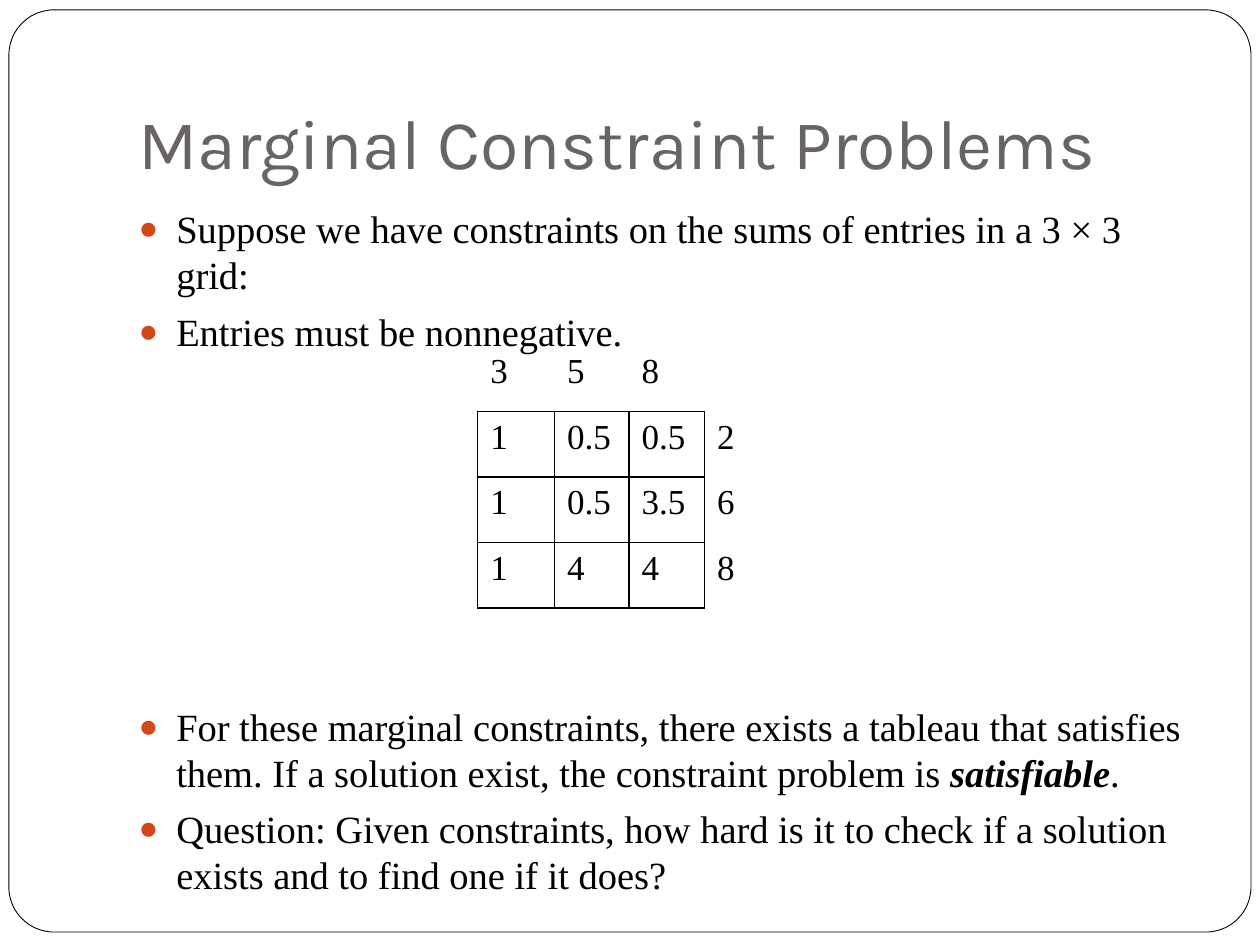
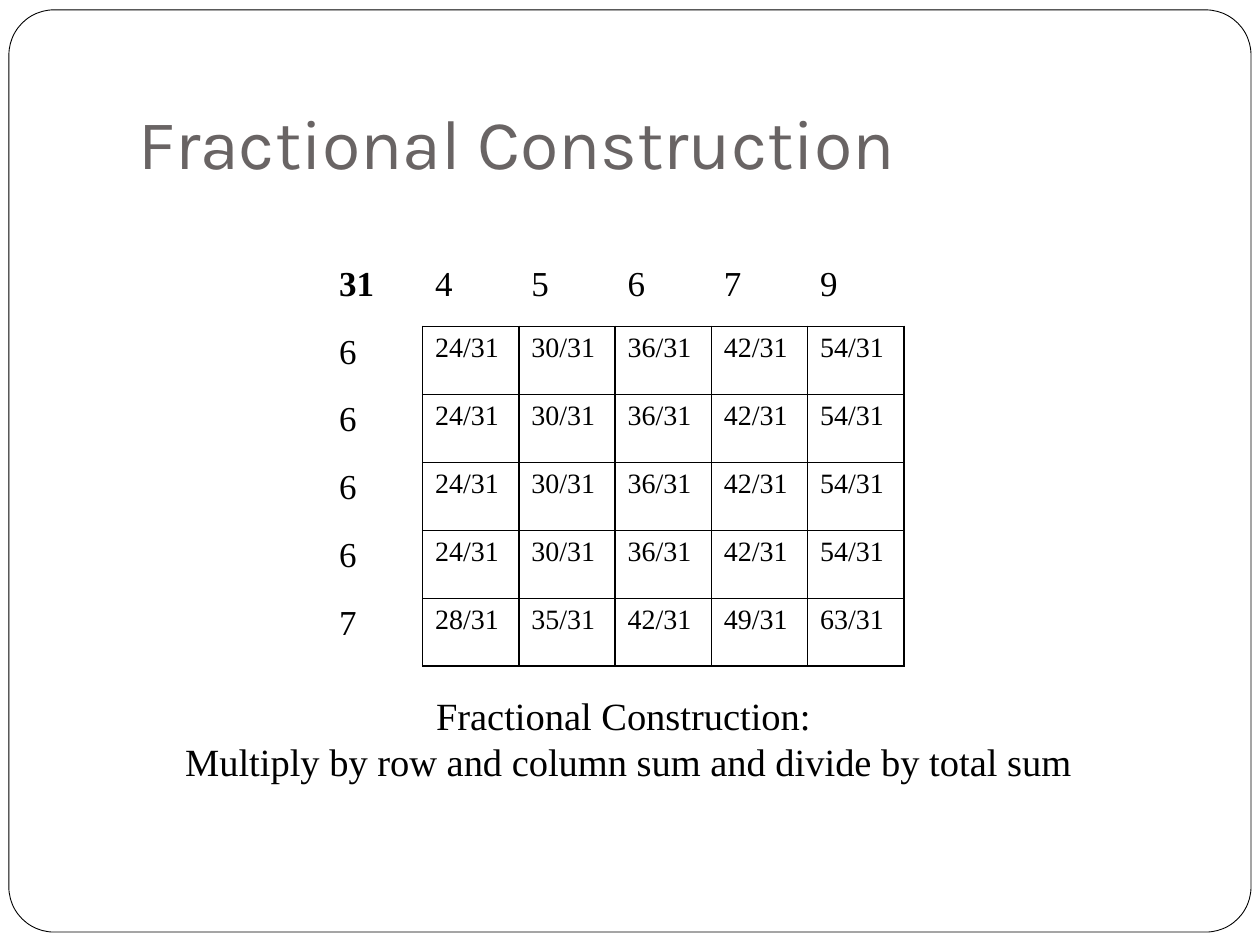
"""Build two slides on marginal constraint problems."""
from dataclasses import dataclass
from typing import NamedTuple

from lxml import etree
from pptx import Presentation
from pptx.dml.color import RGBColor
from pptx.enum import shapes, text
from pptx.oxml import ns
from pptx.util import Cm, Pt


@dataclass(frozen=True)
class Theme:
    """Colours, fonts and type sizes shared by the slides."""
    paper: RGBColor = RGBColor(0xFF, 0xFF, 0xFF)
    ink: RGBColor = RGBColor(0, 0, 0)
    heading: RGBColor = RGBColor(0x69, 0x64, 0x64)
    accent: RGBColor = RGBColor(0xD3, 0x48, 0x17)
    heading_font: str = "Karla"
    body_font: str = "Times New Roman"
    heading_size: Pt = Pt(40)
    body_size: Pt = Pt(22)
    table_size: Pt = Pt(20)
    fraction_size: Pt = Pt(16)
    body_leading: Pt = Pt(26.4)
    rule: Pt = Pt(1)


class Area(NamedTuple):
    """Left, top, width and height of an object."""
    left: Cm
    top: Cm
    width: Cm
    height: Cm


class Bullet(NamedTuple):
    """A list item with an optional emphasised ending."""
    words: str
    emphasis: str = ""
    ending: str = ""
    gap: Pt = Pt(5.8)


@dataclass(frozen=True)
class Tableau:
    """A ruled grid of entries with unruled margins for its sums."""
    left: Cm
    top: Cm
    columns: list[Cm]
    row_height: Cm
    rows: list[list[str]]
    entry_columns: range
    entry_size: Pt

    def is_entry(self, row: int, column: int) -> bool:
        """Tell whether a position lies inside the ruled grid."""
        return 1 <= row < len(self.rows) and column in self.entry_columns


THEME = Theme()
FRAME = Area(Cm(0.18), Cm(0.2), Cm(25.04), Cm(18.59))
TITLE = Area(Cm(2.54), Cm(0.76), Cm(21.59), Cm(3.18))
BODY = Area(Cm(2.54), Cm(4.01), Cm(21.59), Cm(12.7))
CAPTION = Area(Cm(0.89), Cm(13.82), Cm(23.55), Cm(2.13))
SIDES = {"lnL": (0, -1), "lnR": (0, 1), "lnT": (-1, 0), "lnB": (1, 0)}

BULLETS = [
    Bullet("Suppose we have constraints on the sums of entries in a 3 × 3 grid:"),
    Bullet("Entries must be nonnegative."),
    Bullet("For these marginal constraints, there exists a tableau that satisfies them. "
           "If a solution exist, the constraint problem is ", "satisfiable", ".", Pt(199.3)),
    Bullet("Question: Given constraints, how hard is it to check if a solution exists "
           "and to find one if it does?"),
]
SOLUTION = [
    ["3", "5", "8", ""],
    ["1", "0.5", "0.5", "2"],
    ["1", "0.5", "3.5", "6"],
    ["1", "4", "4", "8"],
]
COLUMN_SUMS = [4, 5, 6, 7, 9]
ROW_SUMS = [6, 6, 6, 6, 7]


def place(box, area: Area) -> None:
    """Move and size a box."""
    box.left, box.top, box.width, box.height = area


def set_font(para, size: Pt, name: str = THEME.body_font, color: RGBColor = THEME.ink) -> None:
    """Set the font of a whole paragraph."""
    para.font.size, para.font.name = size, name
    para.font.color.rgb = color


def add_element(parent, tag: str, **attributes: str):
    """Append a drawing element."""
    return etree.SubElement(parent, ns.qn(f"a:{tag}"), attributes)


def add_frame(deck, page) -> None:
    """Put the rounded frame at the back of the slide master."""
    frame = page.shapes.add_shape(shapes.MSO_SHAPE.ROUNDED_RECTANGLE, *FRAME)
    frame.adjustments[0] = 0.049
    frame.shadow.inherit = False
    frame.fill.solid()
    frame.fill.fore_color.rgb = THEME.paper
    frame.line.color.rgb = THEME.ink
    frame.line.width = Pt(0.5)
    frame._element.nvSpPr.cNvPr.set("id", "100")
    deck.slide_master.shapes[0]._element.addprevious(frame._element)


def add_page(deck, layout: int, title: str):
    """Add a slide with a formatted title."""
    page = deck.slides.add_slide(deck.slide_layouts[layout])
    box = page.shapes.title
    place(box, TITLE)
    frame = box.text_frame
    frame.text = title
    frame.auto_size = text.MSO_AUTO_SIZE.NONE
    frame.vertical_anchor = text.MSO_ANCHOR.BOTTOM
    frame.margin_bottom = Cm(0.25)
    para = frame.paragraphs[0]
    para.alignment = text.PP_ALIGN.LEFT
    set_font(para, THEME.heading_size, THEME.heading_font, THEME.heading)
    return page


def add_bullet_mark(para) -> None:
    """Give a paragraph a hanging coloured bullet."""
    properties = para._p.get_or_add_pPr()
    properties.set("marL", str(Cm(0.76)))
    properties.set("indent", str(-Cm(0.76)))
    add_element(add_element(properties, "buClr"), "srgbClr", val=str(THEME.accent))
    add_element(properties, "buSzPct", val="85000")
    add_element(properties, "buChar", char="●")


def fill_body(box, bullets: list[Bullet]) -> None:
    """Write the bullets into the body placeholder."""
    place(box, BODY)
    frame = box.text_frame
    frame.auto_size = text.MSO_AUTO_SIZE.NONE
    for index, bullet in enumerate(bullets):
        para = frame.add_paragraph() if index else frame.paragraphs[0]
        add_bullet_mark(para)
        para.space_before = bullet.gap
        para.line_spacing = THEME.body_leading
        set_font(para, THEME.body_size)
        para.add_run().text = bullet.words
        if bullet.emphasis:
            span = para.add_run()
            span.text = bullet.emphasis
            span.font.bold = span.font.italic = True
            para.add_run().text = bullet.ending


def rule_cell(cell, tableau: Tableau, row: int, column: int) -> None:
    """Rule the sides of a cell that touch an entry."""
    properties = cell._tc.get_or_add_tcPr()
    for side, (down, across) in SIDES.items():
        line = add_element(properties, side, w=str(THEME.rule))
        if tableau.is_entry(row, column) or tableau.is_entry(row + down, column + across):
            add_element(add_element(line, "solidFill"), "srgbClr", val=str(THEME.ink))
        else:
            add_element(line, "noFill")


def add_tableau(page, tableau: Tableau):
    """Draw a tableau as a table."""
    row_count = len(tableau.rows)
    table = page.shapes.add_table(
        row_count, len(tableau.columns), tableau.left, tableau.top,
        sum(tableau.columns), tableau.row_height * row_count).table
    table.first_row = table.horz_banding = False
    for column, width in zip(table.columns, tableau.columns):
        column.width = width
    for row, words in enumerate(tableau.rows):
        table.rows[row].height = tableau.row_height
        for column, word in enumerate(words):
            cell = table.cell(row, column)
            rule_cell(cell, tableau, row, column)
            cell.fill.background()
            cell.text = word
            is_entry = tableau.is_entry(row, column)
            set_font(cell.text_frame.paragraphs[0],
                     tableau.entry_size if is_entry else THEME.table_size)
    return table


def add_caption(page, lines: list[str]) -> None:
    """Add centred lines below a tableau."""
    frame = page.shapes.add_textbox(*CAPTION).text_frame
    frame.word_wrap = True
    frame.text = "\n".join(lines)
    for para in frame.paragraphs:
        para.alignment = text.PP_ALIGN.CENTER
        para.line_spacing = THEME.body_leading
        set_font(para, THEME.body_size)


def build_problem(deck):
    """Build the slide that states the problem."""
    page = add_page(deck, 1, "Marginal Constraint Problems")
    fill_body(page.placeholders[1], BULLETS)
    widths = [Cm(1.55), Cm(1.5), Cm(1.52), Cm(1.52)]
    add_tableau(page, Tableau(Cm(9.63), Cm(6.98), widths, Cm(1.32), SOLUTION,
                              range(3), THEME.table_size))
    return page


def build_construction(deck) -> None:
    """Build the slide with the fractional solution."""
    page = add_page(deck, 5, "Fractional Construction")
    total = sum(ROW_SUMS)
    rows = [[str(total), *map(str, COLUMN_SUMS)]]
    rows += [[str(row), *(f"{row * column}/{total}" for column in COLUMN_SUMS)]
             for row in ROW_SUMS]
    table = add_tableau(page, Tableau(Cm(6.58), Cm(5.21), [Cm(1.94)] * 6, Cm(1.37), rows,
                                      range(1, 6), THEME.fraction_size))
    table.cell(0, 0).text_frame.paragraphs[0].font.bold = True
    add_caption(page, ["Fractional Construction: ",
                       "Multiply by row and column sum and divide by total sum"])


def main() -> None:
    """Build and save the deck."""
    deck = Presentation()
    deck.slide_width, deck.slide_height = Cm(25.4), Cm(19.05)
    add_frame(deck, build_problem(deck))
    build_construction(deck)
    deck.save("out.pptx")


if __name__ == "__main__":
    main()
